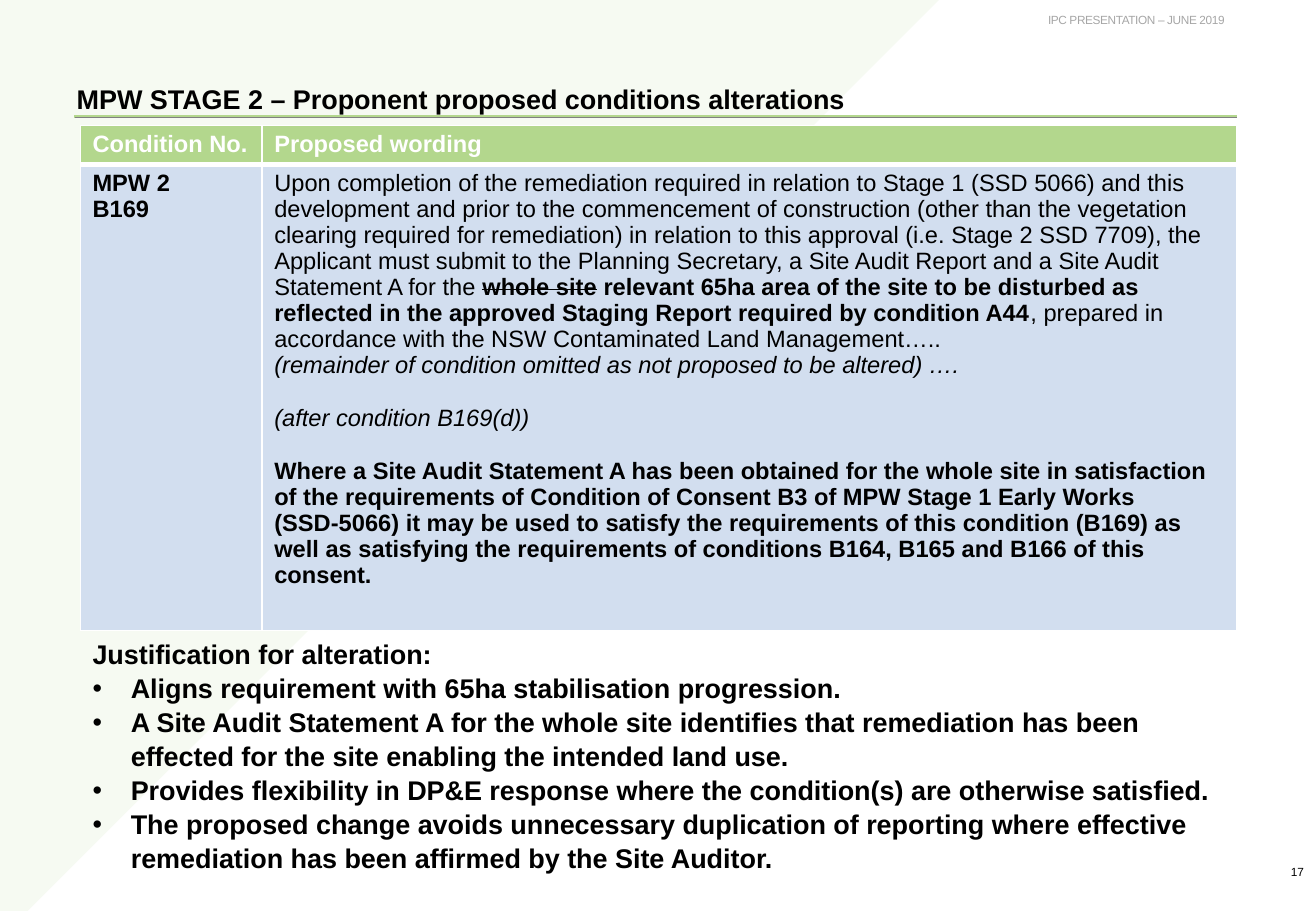
from dataclasses import dataclass

import pptx
import pptx.dml.color
import pptx.enum.shapes
import pptx.enum.text
import pptx.oxml
import pptx.oxml.ns
import pptx.util
from lxml import etree

Cm = pptx.util.Cm
Pt = pptx.util.Pt
ALIGN = pptx.enum.text.PP_ALIGN
ANCHOR = pptx.enum.text.MSO_ANCHOR
SHAPES = pptx.enum.shapes.MSO_SHAPE


@dataclass(frozen=True)
class Theme:
    font: str = "Arial"
    green: str = "B3D78D"
    blue: str = "D2DEEF"
    line_grey: str = "808080"
    text_grey: str = "A6A6A6"
    black: str = "000000"
    white: str = "FFFFFF"
    heading: int = 16
    cell: int = 14
    small: int = 7


def rgb(value):
    return pptx.dml.color.RGBColor.from_string(value)


def child(parent, tag, **attributes):
    return etree.SubElement(parent, pptx.oxml.ns.qn(tag), **attributes)


class SlideBuilder:
    def __init__(self, deck, theme):
        self.theme = theme
        self.page = deck.slides.add_slide(deck.slide_layouts[1])

    def place(self, box, left, top, width, height):
        box.left, box.top = Cm(left), Cm(top)
        box.width, box.height = Cm(width), Cm(height)
        frame = box.text_frame
        frame.word_wrap = True
        frame.auto_size = pptx.enum.text.MSO_AUTO_SIZE.NONE
        frame.vertical_anchor = ANCHOR.TOP
        return frame

    def add_span(self, para, text, size, color, style=""):
        """Add a run; style holds b for bold, i for italic, s for struck out."""
        span = para.add_run()
        span.text = text
        font = span.font
        font.name, font.size = self.theme.font, Pt(size)
        font.bold, font.italic = "b" in style, "i" in style
        font.color.rgb = rgb(color)
        if "s" in style:
            span._r.get_or_add_rPr().set("strike", "sngStrike")
        return span

    def title(self, text, *area):
        para = self.place(self.page.shapes.title, *area).paragraphs[0]
        para.alignment = ALIGN.LEFT
        self.add_span(para, text, self.theme.heading, self.theme.black, "b")

    def bullets(self, lead, points, *area):
        frame = self.place(self.page.placeholders[1], *area)
        for index, text in enumerate([lead, *points]):
            para = frame.add_paragraph() if index else frame.paragraphs[0]
            para.alignment = ALIGN.LEFT
            para.space_before = Pt(0)
            para.line_spacing = 1.05
            props = para._p.get_or_add_pPr()
            indent = Cm(0.8) if index else 0
            props.set("marL", str(indent))
            props.set("indent", str(-indent))
            if index:
                child(props, "a:buFont", typeface=self.theme.font)
                child(props, "a:buChar", char="•")
            else:
                child(props, "a:buNone")
            self.add_span(para, text, self.theme.heading, self.theme.black, "b")

    def small_text(self, text, color, anchor, *area, spacing=0):
        frame = self.place(self.page.shapes.add_textbox(0, 0, 0, 0), *area)
        frame.vertical_anchor = anchor
        para = frame.paragraphs[0]
        para.alignment = ALIGN.RIGHT
        span = self.add_span(para, text, self.theme.small, color)
        if spacing:
            span._r.get_or_add_rPr().set("spc", str(spacing))

    def rule(self, left, right, top, color, weight):
        line = self.page.shapes.add_connector(
            pptx.enum.shapes.MSO_CONNECTOR.STRAIGHT, Cm(left), Cm(top), Cm(right), Cm(top))
        line.line.color.rgb = rgb(color)
        line.line.width = Pt(weight)
        child(line._element.spPr, "a:effectLst")

    def corner(self, left, top, side):
        """Draw the pale triangle behind the upper left of the slide."""
        shape = self.page.shapes.add_shape(
            SHAPES.RIGHT_TRIANGLE, Cm(left), Cm(top), Cm(side), Cm(side))
        shape.rotation = 90
        shape.shadow.inherit = False
        shape.line.fill.background()
        shape.fill.solid()
        shape.fill.fore_color.rgb = rgb(self.theme.green)
        color = shape._element.spPr.find(".//" + pptx.oxml.ns.qn("a:srgbClr"))
        child(color, "a:alpha", val="11000")
        tree = self.page.shapes._spTree
        tree.remove(shape._element)
        tree.insert(2, shape._element)

    def borders(self, cell, bottom):
        props = cell._tc.get_or_add_tcPr()
        for side, weight in zip("LRTB", (1, 1, 1, bottom)):
            edge = child(props, f"a:ln{side}", w=str(Pt(weight)))
            child(child(edge, "a:solidFill"), "a:srgbClr", val=self.theme.white)

    def table(self, rows, widths, heights, left, top):
        """Each cell is a list of (space before, runs); the first row is the header."""
        grid = self.page.shapes.add_table(
            len(rows), len(widths), Cm(left), Cm(top), Cm(sum(widths)), Cm(sum(heights))).table
        grid.horz_banding = False
        for column, width in zip(grid.columns, widths):
            column.width = Cm(width)
        for number, (row, height) in enumerate(zip(rows, heights)):
            grid.rows[number].height = Cm(height)
            header = number == 0
            for position, paragraphs in enumerate(row):
                cell = grid.cell(number, position)
                self.borders(cell, 3 if header else 1)
                cell.fill.solid()
                cell.fill.fore_color.rgb = rgb(self.theme.green if header else self.theme.blue)
                color = self.theme.white if header else self.theme.black
                for index, (gap, runs) in enumerate(paragraphs):
                    frame = cell.text_frame
                    para = frame.add_paragraph() if index else frame.paragraphs[0]
                    para.space_before = Pt(gap)
                    para.line_spacing = 0.98
                    for text, style in runs:
                        self.add_span(para, text, self.theme.cell, color, style)


WORDING = [
    (0, [
        ("Upon completion of the remediation required in relation to Stage 1 (SSD 5066) and this "
         "development and prior to the commencement of construction (other than the vegetation "
         "clearing required for remediation) in relation to this approval (i.e. Stage 2 SSD 7709), "
         "the Applicant must submit to the Planning Secretary, a Site Audit Report and a Site Audit "
         "Statement A for the ", ""),
        ("whole site", "bs"),
        (" relevant 65ha area of the site to be disturbed as reflected in the approved Staging "
         "Report required by condition A44", "b"),
        (", prepared in accordance with the NSW Contaminated Land Management…..", ""),
    ]),
    (0, [("(remainder of condition omitted as not proposed to be altered) ….", "i")]),
    (16, [("(after condition B169(d))", "i")]),
    (16, [("Where a Site Audit Statement A has been obtained for the whole site in satisfaction of "
           "the requirements of Condition of Consent B3 of MPW Stage 1 Early Works (SSD-5066) it "
           "may be used to satisfy the requirements of this condition (B169) as well as satisfying "
           "the requirements of conditions B164, B165 and B166 of this consent.", "b")]),
]
CONDITIONS = [
    [[(0, [("Condition No.", "b")])], [(0, [("Proposed wording", "b")])]],
    [[(0, [("MPW 2", "b")]), (0, [("B169", "b")])], WORDING],
]
JUSTIFICATION = [
    "Aligns requirement with 65ha stabilisation progression.",
    "A Site Audit Statement A for the whole site identifies that remediation has been effected "
    "for the site enabling the intended land use.",
    "Provides flexibility in DP&E response where the condition(s) are otherwise satisfied.",
    "The proposed change avoids unnecessary duplication of reporting where effective remediation "
    "has been affirmed by the Site Auditor.",
]


def main():
    deck = pptx.Presentation()
    deck.slide_width, deck.slide_height = Cm(27.51), Cm(19.05)
    theme = Theme()
    slide = SlideBuilder(deck, theme)
    slide.corner(0, -0.94, 20.57)
    slide.rule(1.55, 25.86, 2.44, theme.green, 1.75)
    slide.rule(1.57, 25.86, 2.46, theme.line_grey, 0.5)
    slide.small_text("IPC PRESENTATION – JUNE 2019", theme.text_grey, ANCHOR.TOP,
                     18.36, 0.15, 7.49, 0.56, spacing=-20)
    slide.small_text("17", theme.black, ANCHOR.MIDDLE, 25.55, 18.08, 1.96, 0.3)
    slide.title("MPW STAGE 2 – Proponent proposed conditions alterations", 1.35, 1.6, 27.56, 1.3)
    slide.table(CONDITIONS, (3.8, 20.37), (0.82, 9.75), 1.68, 2.62)
    slide.bullets("Justification for alteration:", JUSTIFICATION, 1.68, 13.18, 24.16, 5)
    deck.save("out.pptx")


if __name__ == "__main__":
    main()
